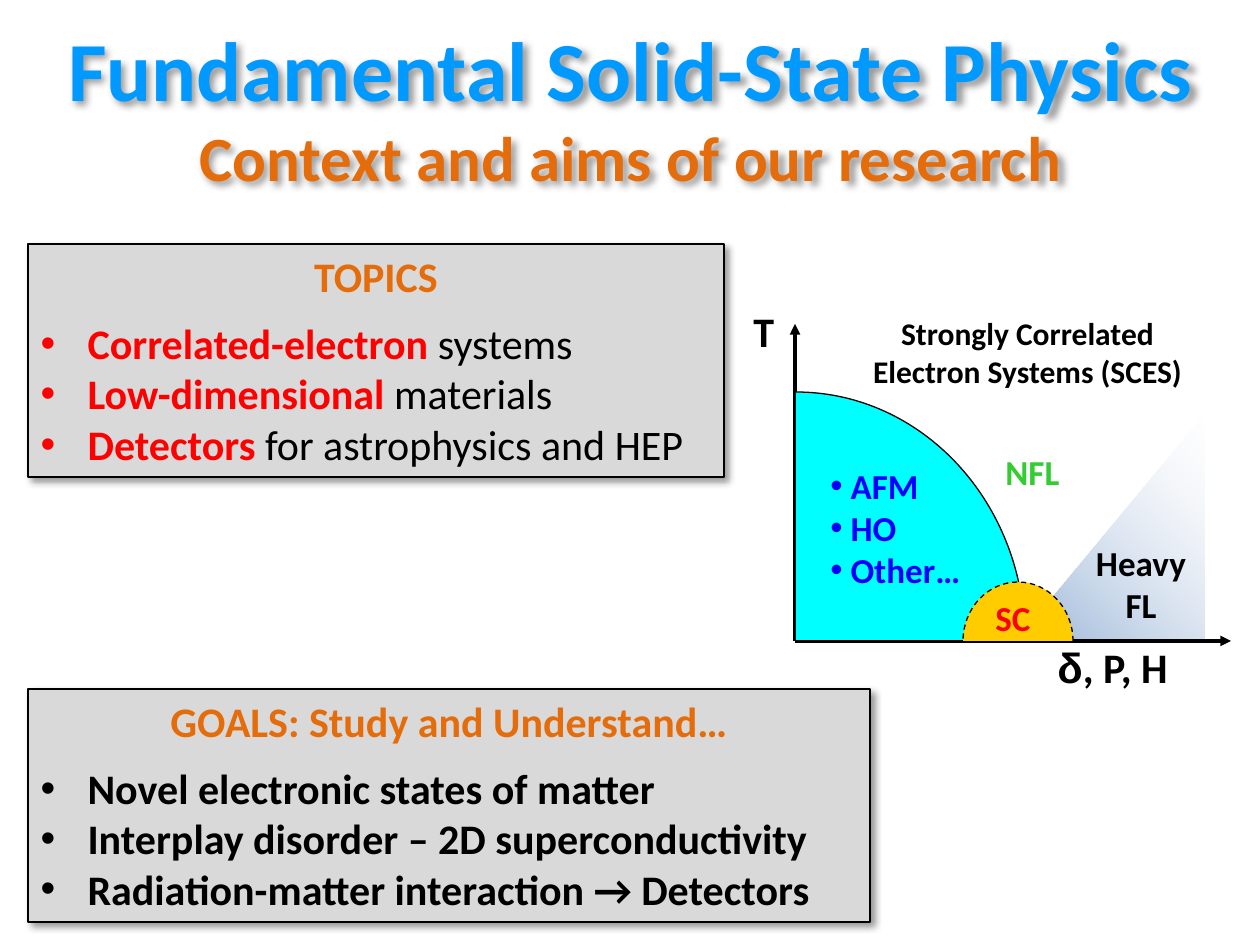
import copy
import dataclasses
import math

import pptx
import pptx.dml.color
import pptx.enum.dml
import pptx.enum.shapes
import pptx.enum.text
import pptx.oxml.ns
import pptx.util
from lxml import etree

PX = 914400 / 126
ALIGN = pptx.enum.text.PP_ALIGN
qn = pptx.oxml.ns.qn


@dataclasses.dataclass(frozen=True)
class Theme:
    font: str = "Calibri"
    symbol_font: str = "Arial"
    black: str = "000000"
    blue: str = "0099FF"
    orange: str = "E46C0A"
    red: str = "FF0000"
    panel: str = "D9D9D9"
    cyan: str = "00FFFF"
    gold: str = "FFCC00"
    order_blue: str = "0000FF"
    green: str = "33CC33"
    wedge_light: str = "D0D8E8"
    wedge_dark: str = "4F81BD"
    title: int = 48
    subtitle: int = 36
    body: int = 24
    label: int = 20
    caption: int = 18


def emu(px):
    return round(px * PX)


def rgb(value):
    return pptx.dml.color.RGBColor.from_string(value)


def add_run(p, text, size=24, color="000000", bold=True, font="Calibri"):
    r = p.add_run()
    r.text = text
    r.font.size = pptx.util.Pt(size)
    r.font.bold = bold
    r.font.color.rgb = rgb(color)
    r.font.name = font


def set_bullet(p, char=None, indent=0):
    pPr = p._p.get_or_add_pPr()
    pPr.set("marL", str(emu(indent)))
    pPr.set("indent", str(-emu(indent)))
    if char:
        etree.SubElement(pPr, qn("a:buFont"), typeface="Arial")
        etree.SubElement(pPr, qn("a:buChar"), char=char)
    else:
        etree.SubElement(pPr, qn("a:buNone"))


def add_shadow(sp):
    effects = etree.SubElement(sp._element.spPr, qn("a:effectLst"))
    shadow = etree.SubElement(
        effects, qn("a:outerShdw"), blurRad="50800", dist="38100",
        dir="2700000", algn="tl", rotWithShape="0")
    color = etree.SubElement(shadow, qn("a:srgbClr"), val="000000")
    etree.SubElement(color, qn("a:alpha"), val="40000")


class SlideBuilder:
    def __init__(self, slide, theme):
        self.s = slide
        self.theme = theme

    def place(self, sp, x, y, w, h):
        sp.left, sp.top, sp.width, sp.height = map(emu, (x, y, w, h))

    def prepare(self, sp, wrap=True):
        tf = sp.text_frame
        tf.word_wrap = wrap
        tf.auto_size = pptx.enum.text.MSO_AUTO_SIZE.NONE
        tf.vertical_anchor = pptx.enum.text.MSO_ANCHOR.TOP
        return tf

    def paragraph(self, tf, first, align):
        p = tf.paragraphs[0] if first else tf.add_paragraph()
        p.alignment = align
        p.space_before = pptx.util.Pt(0)
        return p

    def title(self, lines, x, y, w, h):
        sp = self.s.shapes.title
        self.place(sp, x, y, w, h)
        sp.fill.background()
        add_shadow(sp)
        tf = self.prepare(sp)
        for i, (text, size, color) in enumerate(lines):
            p = self.paragraph(tf, i == 0, ALIGN.CENTER)
            add_run(p, text, size=size, color=color, font=self.theme.font)

    def panel(self, sp, heading, items, x, y, w, h):
        t = self.theme
        self.place(sp, x, y, w, h)
        sp.fill.solid()
        sp.fill.fore_color.rgb = rgb(t.panel)
        sp.line.color.rgb = rgb(t.black)
        sp.line.width = pptx.util.Pt(1.5)
        add_shadow(sp)
        tf = self.prepare(sp)
        p = self.paragraph(tf, True, ALIGN.CENTER)
        set_bullet(p)
        add_run(p, heading, size=t.body, color=t.orange, font=t.font)
        for i, runs in enumerate(items):
            p = self.paragraph(tf, False, ALIGN.JUSTIFY)
            p.space_before = pptx.util.Pt(0 if i else 9.6)
            set_bullet(p, "•", 47)
            for text, color, bold in runs:
                add_run(p, text, size=t.body, color=color, bold=bold, font=t.font)

    def label(self, lines, x, y, w, h, size, color, align=ALIGN.LEFT, bullet=None):
        sp = self.s.shapes.add_textbox(*map(emu, (x, y, w, h)))
        tf = self.prepare(sp, wrap=False)
        for i, runs in enumerate(lines):
            p = self.paragraph(tf, i == 0, align)
            if bullet:
                set_bullet(p, bullet)
            for text, font in runs:
                add_run(p, text, size=size, color=color, font=font)

    def wedge(self, x, y, w, h):
        sp = self.s.shapes.add_shape(
            pptx.enum.shapes.MSO_SHAPE.RIGHT_TRIANGLE, *map(emu, (x, y, w, h)))
        sp.shadow.inherit = False
        sp.line.fill.background()
        sp._element.spPr.find(qn("a:xfrm")).set("flipH", "1")
        sp.fill.gradient()
        sp.fill.gradient_angle = 315
        colors = (self.theme.wedge_light, self.theme.wedge_dark)
        for stop, color in zip(sp.fill.gradient_stops, colors):
            stop.color.rgb = rgb(color)
        fills = list(sp._element.spPr.iter(qn("a:srgbClr")))
        for fill, opacity in zip(fills, (0, 60)):
            etree.SubElement(fill, qn("a:alpha"), val=str(opacity * 1000))

    def axis(self, x1, y1, x2, y2):
        cxn = self.s.shapes.add_connector(
            pptx.enum.shapes.MSO_CONNECTOR.STRAIGHT, *map(emu, (x1, y1, x2, y2)))
        cxn.line.color.rgb = rgb(self.theme.black)
        cxn.line.width = pptx.util.Pt(2)
        etree.SubElement(cxn.line._get_or_add_ln(), qn("a:tailEnd"), type="triangle")
        etree.SubElement(cxn._element.spPr, qn("a:effectLst"))

    def sector(self, cx, cy, rx, ry, quarters, color, dashed=False):
        k = 4 / 3 * math.tan(math.pi / 8)
        points = [(1, 0)]
        for _ in range(quarters):
            x, y = points[-1]
            points += [(x - k * y, y + k * x), (k * x - y, k * y + x), (-y, x)]
        points = [(emu(cx + rx * x), emu(cy - ry * y)) for x, y in points]
        builder = self.s.shapes.build_freeform(*points[0])
        builder.add_line_segments(points[1:] + [(emu(cx), emu(cy))], close=True)
        sp = builder.convert_to_shape()
        sp.shadow.inherit = False
        sp.fill.solid()
        sp.fill.fore_color.rgb = rgb(color)
        sp.line.color.rgb = rgb(self.theme.black)
        sp.line.width = pptx.util.Pt(0.75)
        if dashed:
            sp.line.dash_style = pptx.enum.dml.MSO_LINE.DASH
        outlines = next(sp._element.iter(qn("a:pathLst")))
        area = outlines[0]
        segments = area.findall(qn("a:lnTo"))
        for q in range(quarters):
            bezier = etree.Element(qn("a:cubicBezTo"))
            area.insert(1 + q, bezier)
            for segment in segments[3 * q:3 * q + 3]:
                bezier.append(segment[0])
                area.remove(segment)
        curve = copy.deepcopy(area)
        for node in curve[-2:]:
            curve.remove(node)
        curve.set("fill", "none")
        area.set("stroke", "0")
        outlines.insert(0, curve)


def main():
    prs = pptx.Presentation()
    prs.slide_width, prs.slide_height = emu(1260), emu(945)
    s = prs.slides.add_slide(prs.slide_layouts[3])
    t = Theme()
    b = SlideBuilder(s, t)
    topics, goals = s.placeholders[1], s.placeholders[2]

    b.title([("Fundamental Solid-State Physics", t.title, t.blue),
             ("Context and aims of our research", t.subtitle, t.orange)],
            28, 11, 1205, 190)
    b.panel(topics, "TOPICS",
            [[(key, t.red, True), (rest, t.black, False)] for key, rest in (
                ("Correlated-electron ", "systems"),
                ("Low-dimensional ", "materials"),
                ("Detectors ", "for astrophysics and HEP"))],
            28, 244, 696, 233)
    b.panel(goals, "GOALS: Study and Understand…",
            [[(text, t.black, True)] for text in (
                "Novel electronic states of matter",
                "Interplay disorder – 2D superconductivity",
                "Radiation-matter interaction → Detectors")],
            28, 689, 842, 233)

    b.wedge(1016, 413, 189, 228)
    b.axis(795, 641, 795, 324)
    b.axis(795, 641, 1231, 641)
    b.sector(796, 640, 229, 248, 1, t.cyan)
    b.sector(1018, 641, 55, 59, 2, t.gold, dashed=True)

    def plain(*lines):
        return [[(line, t.font)] for line in lines]

    b.label(plain("SC"), 983, 590, 60, 54, t.label, t.red)
    b.label(plain(" AFM", " HO", " Other…"), 818, 458, 160, 139,
            t.label, t.order_blue, bullet="•")
    b.label(plain("NFL"), 993, 444, 79, 54, t.label, t.green)
    b.label(plain("Heavy", "FL"), 1083, 535, 116, 97,
            t.label, t.black, ALIGN.CENTER)
    b.label(plain("Strongly Correlated", "Electron Systems (SCES)"),
            855, 308, 345, 89, t.caption, t.black, ALIGN.CENTER)
    b.label(plain("T"), 741, 299, 45, 63, t.body, t.black)
    b.label([[("δ", t.symbol_font), (", P, H", t.font)]],
            1045, 635, 136, 63, t.body, t.black)
    prs.save("out.pptx")


if __name__ == "__main__":
    main()
